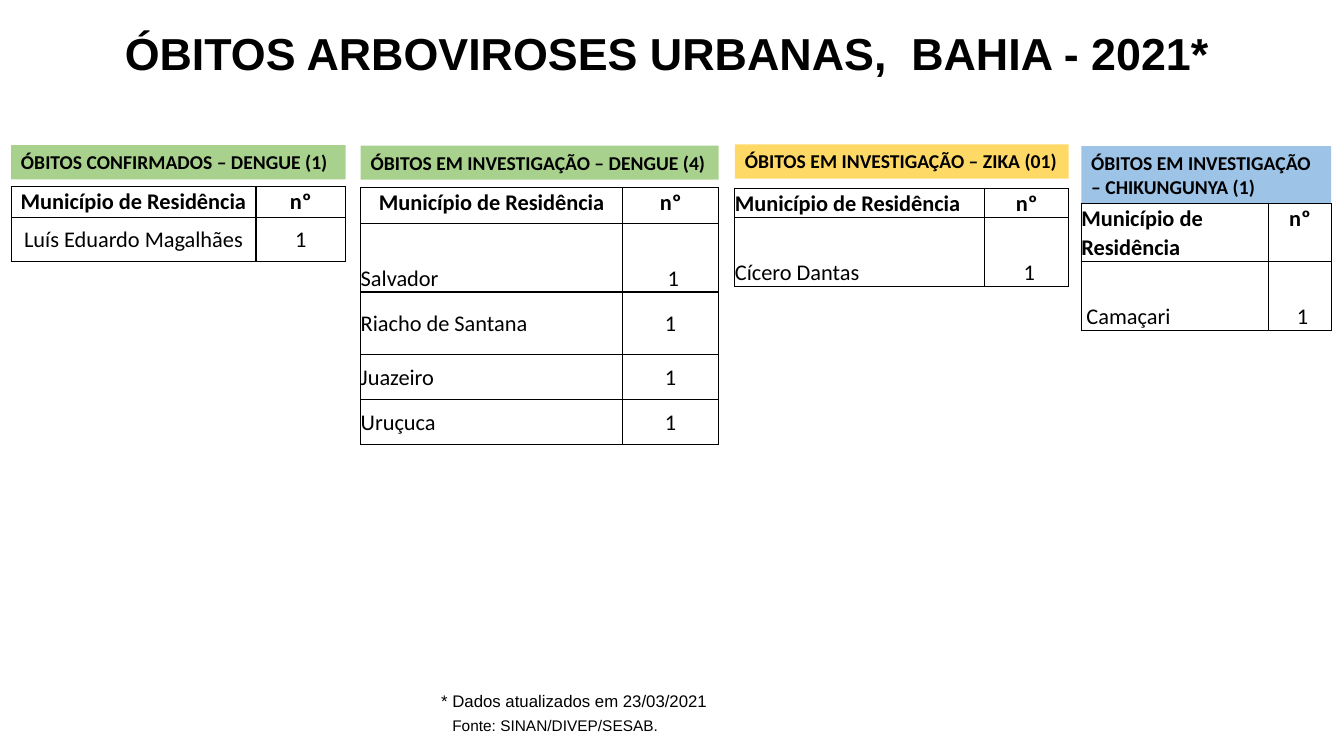
from dataclasses import dataclass
from lxml.etree import SubElement
from pptx import Presentation
from pptx.dml.color import RGBColor
from pptx.enum.shapes import MSO_SHAPE
from pptx.enum.text import MSO_ANCHOR, PP_ALIGN
from pptx.oxml.ns import qn
from pptx.util import Cm, Pt

LEFT, CENTER, JUSTIFY = PP_ALIGN.LEFT, PP_ALIGN.CENTER, PP_ALIGN.JUSTIFY
TOP, MIDDLE, BOTTOM = MSO_ANCHOR.TOP, MSO_ANCHOR.MIDDLE, MSO_ANCHOR.BOTTOM


def color(code):
    return RGBColor.from_string(code)


def write_text(frame, text, size=16, font="Calibri", bold=False, align=LEFT,
               anchor=TOP, wrap=True, spacing=None):
    frame.word_wrap = wrap
    frame.vertical_anchor = anchor
    paragraph = frame.paragraphs[0]
    paragraph.text = text
    paragraph.alignment = align
    paragraph.line_spacing = spacing
    paragraph.font.size = Pt(size)
    paragraph.font.name = font
    paragraph.font.bold = bold
    paragraph.font.color.rgb = color("000000")


@dataclass
class Panel:
    title: str
    fill: str
    left: float
    top: float
    height: float
    table_top: float
    columns: list
    row_heights: list
    deaths: list  # (municipality, count, vertical anchor)
    title_align: PP_ALIGN = LEFT
    title_wrap: bool = True
    header_align: PP_ALIGN = LEFT
    body_align: PP_ALIGN = LEFT
    indent: float = 0


class SlideBuilder:
    border_color = "000000"
    border_width = Pt(1)
    line_spacing = 1.06

    def __init__(self, slide):
        self.slide = slide

    def title(self, text, left, top, width, height):
        shape = self.slide.shapes.title
        shape.left, shape.top = Cm(left), Cm(top)
        shape.width, shape.height = Cm(width), Cm(height)
        write_text(shape.text_frame, text, size=32, font="Arial", bold=True, align=CENTER)

    def note(self, text, left, top, width, height, **style):
        shape = self.slide.shapes.add_textbox(Cm(left), Cm(top), Cm(width), Cm(height))
        write_text(shape.text_frame, text, font="Arial", **style)

    def banner(self, panel):
        shape = self.slide.shapes.add_shape(
            MSO_SHAPE.RECTANGLE, Cm(panel.left), Cm(panel.top),
            Cm(sum(panel.columns)), Cm(panel.height))
        shape.shadow.inherit = False
        shape.fill.solid()
        shape.fill.fore_color.rgb = color(panel.fill)
        shape.line.fill.background()
        write_text(shape.text_frame, panel.title, size=14, bold=True,
                   align=panel.title_align, wrap=panel.title_wrap)

    def borders(self, cell):
        properties = cell._tc.get_or_add_tcPr()
        for index, side in enumerate(("a:lnL", "a:lnR", "a:lnT", "a:lnB")):
            line = properties.makeelement(qn(side), {"w": str(self.border_width)})
            fill = SubElement(line, qn("a:solidFill"))
            SubElement(fill, qn("a:srgbClr"), val=self.border_color)
            properties.insert(index, line)

    def cell(self, cell, text, indent=0, **style):
        cell.margin_left = Cm(indent)
        cell.margin_right = cell.margin_top = cell.margin_bottom = 0
        cell.fill.background()
        self.borders(cell)
        anchor = style.pop("anchor", TOP)
        write_text(cell.text_frame, text, spacing=self.line_spacing, wrap=None,
                   anchor=None, **style)
        cell.vertical_anchor = anchor

    def table(self, panel):
        table = self.slide.shapes.add_table(
            len(panel.row_heights), len(panel.columns), Cm(panel.left), Cm(panel.table_top),
            Cm(sum(panel.columns)), Cm(sum(panel.row_heights))).table
        table.first_row = table.horz_banding = False
        for column, width in zip(table.columns, panel.columns):
            column.width = Cm(width)
        for row, height in zip(table.rows, panel.row_heights):
            row.height = Cm(height)
        self.cell(table.cell(0, 0), "Município de Residência", bold=True,
                  align=panel.header_align)
        self.cell(table.cell(0, 1), "nº", bold=True, align=CENTER)
        for row, (city, count, anchor) in enumerate(panel.deaths, start=1):
            self.cell(table.cell(row, 0), city, indent=panel.indent,
                      align=panel.body_align, anchor=anchor)
            self.cell(table.cell(row, 1), count, align=CENTER, anchor=anchor,
                      indent=0.13 if anchor == BOTTOM else 0)


PANELS = [
    Panel("ÓBITOS CONFIRMADOS – DENGUE (1)", "A9D18E", 0.28, 3.66, 0.86, 4.7,
          [6.17, 2.26], [0.79, 1.09], [("Luís Eduardo Magalhães", "1", MIDDLE)],
          header_align=CENTER, body_align=CENTER),
    Panel("ÓBITOS EM INVESTIGAÇÃO – DENGUE (4)", "A9D18E", 9.09, 3.67, 0.86, 4.73,
          [6.6, 2.42], [0.9, 1.73, 1.57, 1.14, 1.14],
          [("Salvador", "1", BOTTOM), ("Riacho de Santana", "1", MIDDLE),
           ("Juazeiro", "1", MIDDLE), ("Uruçuca", "1", MIDDLE)],
          title_wrap=False, header_align=CENTER),
    Panel("ÓBITOS EM INVESTIGAÇÃO – ZIKA (01)", "FFD966", 18.52, 3.64, 0.86, 4.75,
          [6.3, 2.11], [0.72, 1.73], [("Cícero Dantas", "1", BOTTOM)],
          title_align=JUSTIFY),
    Panel("ÓBITOS EM INVESTIGAÇÃO – CHIKUNGUNYA (1)", "9DC3E6", 27.25, 3.68, 1.45, 5.13,
          [4.72, 1.58], [1.45, 1.73], [("Camaçari", "1", BOTTOM)], indent=0.13),
]


def main():
    presentation = Presentation()
    presentation.slide_width, presentation.slide_height = Cm(33.87), Cm(19.05)
    builder = SlideBuilder(presentation.slides.add_slide(presentation.slide_layouts[5]))

    # Title
    builder.title("ÓBITOS ARBOVIROSES URBANAS,  BAHIA - 2021*", 1.88, 0.53, 29.87, 1.62)

    # Deaths by disease
    for panel in PANELS:
        builder.banner(panel)
        builder.table(panel)

    # Footnotes
    builder.note("* Dados atualizados em 23/03/2021", 10.87, 17.27, 7.26, 0.77,
                 size=12, wrap=False)
    builder.note("Fonte: SINAN/DIVEP/SESAB.", 11.15, 17.91, 13.94, 0.73, size=11)

    presentation.save("out.pptx")


if __name__ == "__main__":
    main()
